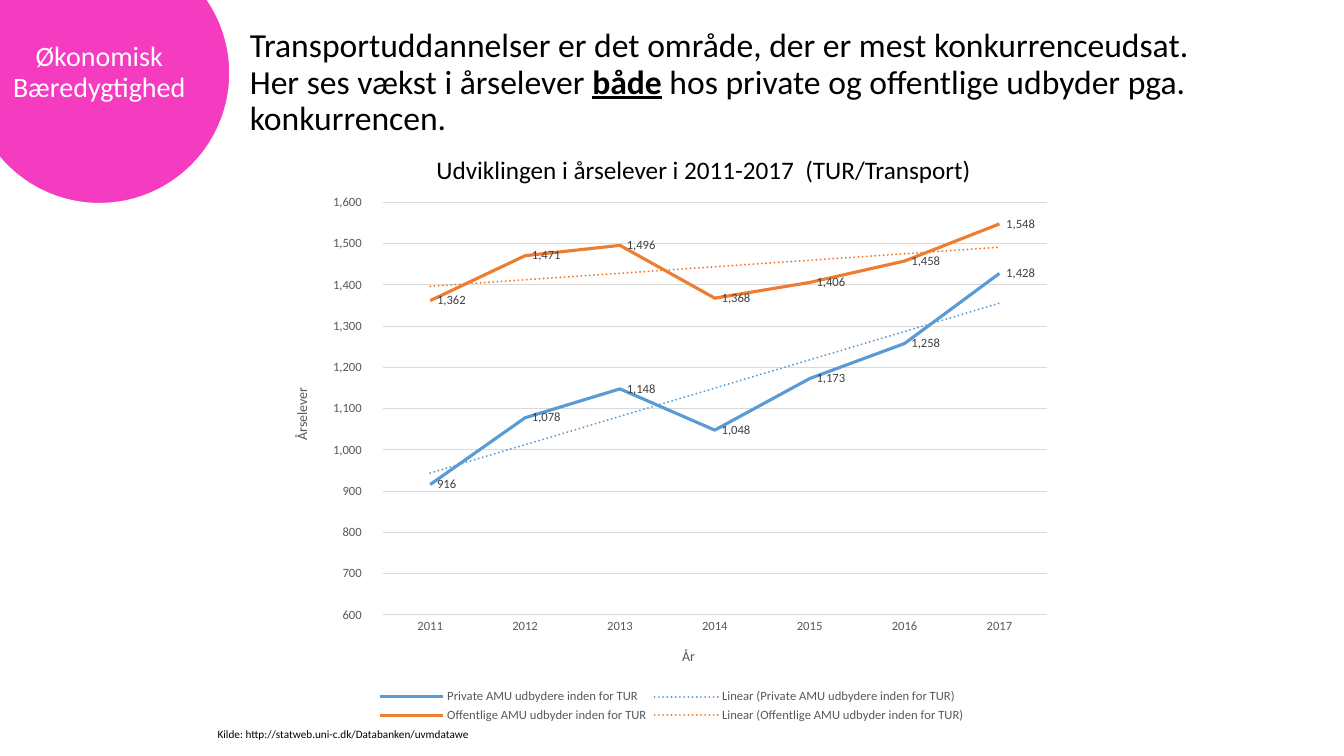
from dataclasses import dataclass

from lxml import etree
from pptx import Presentation
from pptx.chart.data import CategoryChartData
from pptx.dml.color import RGBColor
from pptx.enum.chart import XL_CHART_TYPE, XL_LABEL_POSITION as LabelPos
from pptx.enum.chart import XL_LEGEND_POSITION as LegendPos, XL_TICK_MARK as Tick
from pptx.enum.shapes import MSO_SHAPE
from pptx.enum.text import MSO_ANCHOR as Anchor, PP_ALIGN as Align
from pptx.oxml import parse_xml
from pptx.oxml.ns import nsdecls, qn
from pptx.util import Inches, Pt

FONT = "Calibri"
COLORS = {
    "text": "000000", "white": "FFFFFF", "pink": "F53BC0", "axis": "595959",
    "grid": "D9D9D9", "label": "404040",
    "private": "5B9BD5", "public": "ED7D31",
}
NUMBER_FORMAT = r"_-* #,##0\ _k_r_._-;\-* #,##0\ _k_r_._-;"
PLOT_LAYOUT = {"x": 0.13, "y": 0.086, "w": 0.851, "h": 0.719}


@dataclass
class Run:
    text: str
    strong: bool = False


@dataclass
class TextBlock:
    box: tuple[float, float, float, float]
    lines: list[list[Run]]
    size: float
    color: str = "text"
    anchor: Anchor = Anchor.TOP
    align: Align = Align.LEFT
    spacing: float = 1.0
    inset: float | None = None
    wrap: bool = True


@dataclass
class Provider:
    name: str
    color: str
    students: list[int]


YEARS = [str(year) for year in range(2011, 2018)]
PROVIDERS = [
    Provider("Private AMU udbydere inden for TUR", "private",
             [916, 1078, 1148, 1048, 1173, 1258, 1428]),
    Provider("Offentlige AMU udbyder inden for TUR", "public",
             [1362, 1471, 1496, 1368, 1406, 1458, 1548]),
]
HEADLINE = TextBlock(
    (2.38, 0.1, 10.03, 1.45),
    [[Run("Transportuddannelser er det område, der er mest konkurrenceudsat. ")],
     [Run("Her ses vækst i årselever "), Run("både", strong=True),
      Run(" hos private og offentlige udbyder pga. konkurrencen.")]],
    24, anchor=Anchor.MIDDLE, spacing=0.9)
SOURCE = TextBlock((2.06, 7.17, 5, 0.24),
                   [[Run("Kilde: http://statweb.uni-c.dk/Databanken/uvmdatawe")]], 8)
CHART_HEADING = TextBlock(
    (4.23, 1.48, 5.56, 0.4),
    [[Run("Udviklingen i årselever i 2011-2017  (TUR/Transport)")]], 18, wrap=False)
THEME = TextBlock((0.07, -0.19, 1.83, 1.83), [[Run("Økonomisk Bæredygtighed")]],
                  20, "white", Anchor.MIDDLE, Align.CENTER, 0.9, 0.03)


def rgb(key: str) -> RGBColor:
    return RGBColor.from_string(COLORS[key])


def style_font(font, size: float, color: str) -> None:
    font.name, font.size, font.bold = FONT, Pt(size), False
    font.color.rgb = rgb(color)


def style_line(line, color: str, width: float) -> None:
    line.color.rgb = rgb(color)
    line.width = Pt(width)


def add_text(slide, block: TextBlock) -> None:
    frame = slide.shapes.add_textbox(*map(Inches, block.box)).text_frame
    frame.word_wrap = block.wrap
    frame.vertical_anchor = block.anchor
    if block.inset is not None:
        frame.margin_left = frame.margin_right = Inches(block.inset)
        frame.margin_top = frame.margin_bottom = Inches(block.inset)
    paragraph = frame.paragraphs[0]
    paragraph.alignment, paragraph.line_spacing = block.align, block.spacing
    for index, line in enumerate(block.lines):
        if index:
            paragraph.add_line_break()
        for part in line:
            run = paragraph.add_run()
            run.text = part.text
            style_font(run.font, block.size, block.color)
            run.font.bold = run.font.underline = part.strong


def style_axis(axis, title: str) -> None:
    axis.major_tick_mark = axis.minor_tick_mark = Tick.NONE
    style_font(axis.tick_labels.font, 9, "axis")
    run = axis.axis_title.text_frame.paragraphs[0].add_run()
    run.text = title
    style_font(run.font, 10, "axis")


def add_trendline(series, color: str) -> None:
    trendline = parse_xml(
        f'<c:trendline {nsdecls("c", "a")}><c:spPr>'
        f'<a:ln w="{Pt(1.5)}" cap="rnd"><a:solidFill><a:srgbClr val="{COLORS[color]}"/>'
        '</a:solidFill><a:prstDash val="sysDot"/></a:ln></c:spPr>'
        '<c:trendlineType val="linear"/><c:dispRSqr val="0"/><c:dispEq val="0"/>'
        '</c:trendline>')
    series._element.find(qn("c:cat")).addprevious(trendline)


def set_plot_layout(chart) -> None:
    area = chart._chartSpace.chart.plotArea
    for old in area.findall(qn("c:layout")):
        area.remove(old)
    layout = etree.Element(qn("c:layout"))
    manual = etree.SubElement(layout, qn("c:manualLayout"))
    settings = {"layoutTarget": "inner", "xMode": "edge", "yMode": "edge", **PLOT_LAYOUT}
    for tag, value in settings.items():
        etree.SubElement(manual, qn(f"c:{tag}")).set("val", str(value))
    area.insert(0, layout)


def add_student_chart(slide) -> None:
    data = CategoryChartData(number_format=NUMBER_FORMAT)
    data.categories = YEARS
    for provider in PROVIDERS:
        data.add_series(provider.name, provider.students)
    box = map(Inches, (2.79, 1.52, 7.74, 5.69))
    chart = slide.shapes.add_chart(XL_CHART_TYPE.LINE, *box, data).chart
    style_font(chart.font, 10, "text")
    chart.has_title = False
    set_plot_layout(chart)

    # Axes
    years, students = chart.category_axis, chart.value_axis
    style_axis(years, "År")
    style_line(years.format.line, "grid", 0.75)
    style_axis(students, "Årselever")
    students.format.line.fill.background()
    students.minimum_scale, students.maximum_scale, students.major_unit = 600, 1600, 100
    students.tick_labels.number_format = NUMBER_FORMAT
    students.tick_labels.number_format_is_linked = False
    style_line(students.major_gridlines.format.line, "grid", 0.75)

    # Legend
    chart.has_legend = True
    chart.legend.position = LegendPos.BOTTOM
    chart.legend.include_in_layout = False
    style_font(chart.legend.font, 9, "axis")

    # Series with labels and trends
    chart.plots[0].vary_by_categories = False
    for series, provider in zip(chart.plots[0].series, PROVIDERS):
        series.smooth = False
        style_line(series.format.line, provider.color, 2.25)
        labels = series.data_labels
        labels.show_value = True
        labels.position = LabelPos.RIGHT
        style_font(labels.font, 9, "label")
        add_trendline(series, provider.color)


def add_theme_circle(slide) -> None:
    circle = slide.shapes.add_shape(
        MSO_SHAPE.OVAL, *map(Inches, (-0.31, -0.57, 2.59, 2.59)))
    circle.shadow.inherit = False
    circle.fill.solid()
    circle.fill.fore_color.rgb = rgb("pink")
    style_line(circle.line, "white", 1)
    add_text(slide, THEME)


def main() -> None:
    deck = Presentation()
    deck.slide_width, deck.slide_height = Inches(13.33), Inches(7.5)
    slide = deck.slides.add_slide(deck.slide_layouts[6])
    for block in (HEADLINE, SOURCE):
        add_text(slide, block)
    add_student_chart(slide)
    add_text(slide, CHART_HEADING)
    add_theme_circle(slide)
    deck.save("out.pptx")


if __name__ == "__main__":
    main()
